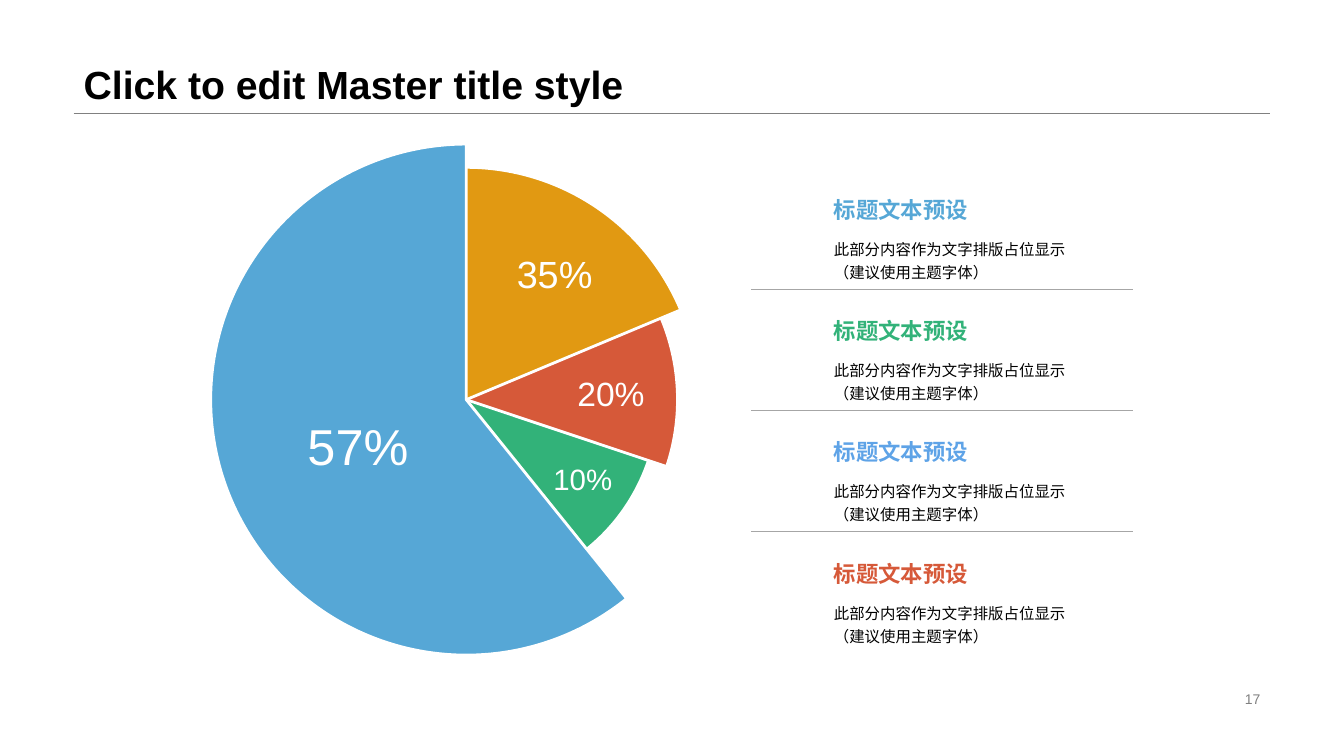
from dataclasses import dataclass

from lxml.etree import SubElement
from pptx import Presentation
from pptx.dml.color import RGBColor as RGB
from pptx.enum.shapes import MSO_CONNECTOR as LINK, MSO_SHAPE as SHAPE
from pptx.enum.text import MSO_ANCHOR as ANCHOR, MSO_AUTO_SIZE as FIT, PP_ALIGN as ALIGN
from pptx.oxml.ns import qn
from pptx.util import Emu, Pt

PX = 9144  # 100 px to the inch


@dataclass(frozen=True)
class Theme:
    font: str = "Arial"
    blue: str = "56A7D6"
    sky: str = "5EA3E7"
    green: str = "32B279"
    red: str = "D65939"
    gold: str = "E19912"
    white: str = "FFFFFF"
    black: str = "000000"
    gray: str = "808080"
    rule: str = "A6A6A6"
    title: int = 28
    head: int = 16
    body: int = 11
    page: int = 10


T = Theme()
HEAD = "标题文本预设"
BODY = "此部分内容作为文字排版占位显示\n（建议使用主题字体）"

# Centre of the pie, then diameter, start and end angle, colour; back to front
HUB = (462, 396)
PIES = [
    (381, 208.03, 131.55, T.green),
    (419, 90.76, 18.47, T.red),
    (461, 90.76, 337.28, T.gold),
    (507, 51.15, 270, T.blue),
]
# Label, left, top, width, type size
LABELS = [
    ("57%", 271, 409, 168, 36),
    ("35%", 494, 239, 112, 27),
    ("20%", 550, 357, 112, 24),
    ("10%", 522, 442, 112, 21),
]
ROWS = [T.blue, T.green, T.sky, T.red]


def px(*vals):
    return [Emu(v * PX) for v in vals]


def assign(obj, vals):
    for name, val in vals.items():
        setattr(obj, name, val)


def write(shape, text, size, color, bold=False, frame=None, para=None):
    tf = shape.text_frame
    assign(tf, {"word_wrap": True, "auto_size": FIT.NONE, **(frame or {})})
    p = tf.paragraphs[0]
    p.text = text
    assign(p, para or {})
    for run in p.runs:
        assign(run.font, {"name": T.font, "size": Pt(size), "bold": bold})
        run.font.color.rgb = RGB.from_string(color)
    # A line break carries its own type size
    for br in p._p.findall(qn("a:br")):
        SubElement(br, qn("a:rPr")).set("sz", str(size * 100))


def add_text(slide, box, text, size, color, inset=0, **style):
    shape = slide.shapes.add_textbox(*px(*box))
    sides = ("left", "top", "right", "bottom")
    assign(shape.text_frame, {f"margin_{s}": Emu(inset * PX) for s in sides})
    write(shape, text, size, color, **style)


def add_rule(slide, left, right, y, color, width):
    line = slide.shapes.add_connector(LINK.STRAIGHT, *px(left, y, right, y))
    line.line.color.rgb = RGB.from_string(color)
    line.line.width = Pt(width)
    SubElement(line._element.spPr, qn("a:effectLst"))


def add_pie(slide, size, start, end, color):
    left, top = (c - size // 2 for c in HUB)
    pie = slide.shapes.add_shape(SHAPE.PIE, *px(left, top, size, size))
    # Angles are stored in 60000ths of a degree, scaled by 100000
    for i, angle in enumerate((start, end)):
        pie.adjustments[i] = angle * 0.6
    pie.shadow.inherit = False
    pie.fill.solid()
    pie.fill.fore_color.rgb = RGB.from_string(color)
    pie.line.color.rgb = RGB.from_string(T.white)
    pie.line.width = Pt(2)


def add_title(slide, text):
    title = slide.shapes.title
    assign(title, dict(zip(("left", "top", "width", "height"), px(73, 0, 1187, 112))))
    write(title, text, T.title, T.black, bold=True,
          frame={"vertical_anchor": ANCHOR.BOTTOM},
          para={"alignment": ALIGN.LEFT, "line_spacing": 0.9})


def add_row(slide, top, color):
    add_text(slide, (827, top + 40, 232, 52), BODY, T.body, T.black,
             para={"line_spacing": 1.2})
    add_text(slide, (827, top, 232, 40), HEAD, T.head, color, bold=True,
             frame={"word_wrap": False})


def main():
    prs = Presentation()
    prs.slide_width, prs.slide_height = px(1333, 750)
    slide = prs.slides.add_slide(prs.slide_layouts[5])

    # Header and page number
    add_rule(slide, 73, 1260, 112, T.gray, 0.25)
    add_title(slide, "Click to edit Master title style")
    add_text(slide, (942, 682, 318, 23), "17", T.page, T.gray, inset=10,
             frame={"vertical_anchor": ANCHOR.MIDDLE, "margin_top": 0, "margin_bottom": 0},
             para={"alignment": ALIGN.RIGHT})

    # Stepped pie and its labels
    for pie in PIES:
        add_pie(slide, *pie)
    for text, left, top, width, size in LABELS:
        add_text(slide, (left, top, width, 65), text, size, T.white,
                 frame={"vertical_anchor": ANCHOR.MIDDLE, "word_wrap": False},
                 para={"alignment": ALIGN.CENTER})

    # Text rows, with a rule between neighbours
    for i, color in enumerate(ROWS):
        top = 195 + 361 * i // 3
        add_row(slide, top, color)
        if i < len(ROWS) - 1:
            add_rule(slide, 745, 1124, top + 92, T.rule, 0.5)

    prs.save("out.pptx")


if __name__ == "__main__":
    main()
